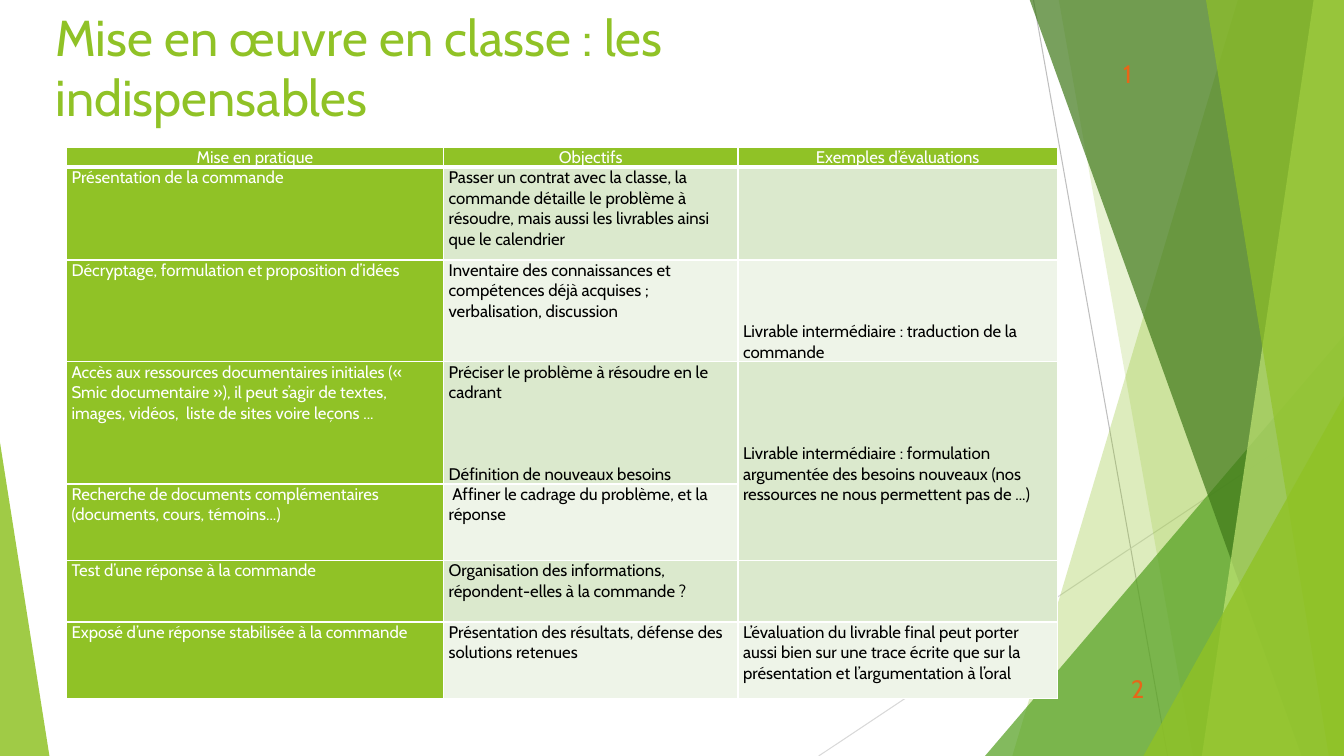
from lxml import etree
from pptx import Presentation
from pptx import util as u
from pptx.dml.color import RGBColor
from pptx.enum import shapes, text
from pptx.oxml import ns

FONT = "Cabin"
COLORS = {
    "green": "90C226", "leaf": "54A021", "forest": "3F7819", "lime": "C0E474",
    "band": "DBE9CD", "pale": "EEF4E8", "white": "FFFFFF", "black": "000000",
    "orange": "E76618", "gray": "BFBFBF", "silver": "D9D9D9",
}
WIDTH, HEIGHT = 13.33, 7.5
COLUMNS = [3.74, 2.92, 3.17]
ROWS = [0.2, 0.92, 1.0, 1.2, 0.76, 0.61, 0.76]
HEADINGS = ["Mise en pratique", "Objectifs", "Exemples d’évaluations"]
STEPS = [
    ["Présentation de la commande",
     "Passer un contrat avec la classe, la commande détaille le problème à résoudre, "
     "mais aussi les livrables ainsi que le calendrier", ""],
    ["Décryptage, formulation et proposition d’idées",
     "Inventaire des connaissances et compétences déjà acquises ; verbalisation, discussion",
     "Livrable intermédiaire : traduction de la commande"],
    ["Accès aux ressources documentaires initiales (« Smic documentaire »), il peut s’agir "
     "de textes, images, vidéos,  liste de sites voire leçons ...",
     "Préciser le problème à résoudre en le cadrant\nDéfinition de nouveaux besoins",
     "Livrable intermédiaire : formulation argumentée des besoins nouveaux "
     "(nos ressources ne nous permettent pas de ...)"],
    ["Recherche de documents complémentaires (documents, cours, témoins...)",
     " Affiner le cadrage du problème, et la réponse", ""],
    ["Test d’une réponse à la commande",
     "Organisation des informations, répondent-elles à la commande ?", ""],
    ["Exposé d’une réponse stabilisée à la commande",
     "Présentation des résultats, défense des solutions retenues",
     "L’évaluation du livrable final peut porter aussi bien sur une trace écrite "
     "que sur la présentation et l’argumentation à l’oral"],
]
TOP_GAPS = {(2, 2): 0.61, (3, 2): 0.81}


def rgb(name):
    return RGBColor.from_string(COLORS[name])


def write(frame, content, size=12, color="black", align=text.PP_ALIGN.LEFT, gap=0):
    for index, line in enumerate(content.split("\n")):
        paragraph = frame.paragraphs[0] if index == 0 else frame.add_paragraph()
        paragraph.alignment = align
        if index:
            paragraph.space_before = u.Pt(gap)
        run = paragraph.add_run()
        run.text = line
        run.font.name = FONT
        run.font.size = u.Pt(size)
        run.font.bold = False
        run.font.color.rgb = rgb(color)


def paint(facet, color, opacity):
    facet.shadow.inherit = False
    facet.fill.solid()
    facet.fill.fore_color.rgb = rgb(color)
    facet.line.fill.background()
    tone = facet.fill._xPr.find(".//" + ns.qn("a:srgbClr"))
    etree.SubElement(tone, ns.qn("a:alpha"), val=str(opacity * 1000))


def add_ray(slide, start, end, color):
    ray = slide.shapes.add_connector(
        shapes.MSO_CONNECTOR.STRAIGHT, *[u.Inches(n) for n in (*start, *end)])
    ray.line.color.rgb = rgb(color)
    ray.line.width = u.Pt(0.75)
    etree.SubElement(ray._element.spPr, ns.qn("a:effectLst"))


def add_panel(slide, top_x, bottom_x, color, opacity):
    outline = slide.shapes.build_freeform(
        u.Inches(top_x), u.Inches(-0.01))
    corners = [(WIDTH, -0.01), (WIDTH, HEIGHT), (bottom_x, HEIGHT)]
    outline.add_line_segments([(u.Inches(x), u.Inches(y)) for x, y in corners])
    paint(outline.convert_to_shape(), color, opacity)


def add_wedge(slide, left, top, width, apex, color, opacity):
    wedge = slide.shapes.add_shape(
        shapes.MSO_SHAPE.ISOSCELES_TRIANGLE, u.Inches(left), u.Inches(top),
        u.Inches(width), u.Inches(HEIGHT - top))
    wedge.adjustments[0] = apex
    paint(wedge, color, opacity)


def add_backdrop(slide):
    add_ray(slide, (10.25, 0), (11.58, HEIGHT), "gray")
    add_ray(slide, (WIDTH, 4.03), (8.12, HEIGHT), "silver")
    add_panel(slide, 12.28, 10.04, "green", 30)
    add_panel(slide, 10.5, 11.83, "green", 20)
    add_wedge(slide, 9.77, 3.33, 3.56, 1, "leaf", 72)
    add_panel(slide, 10.21, 12.91, "forest", 70)
    add_panel(slide, 13.03, 11.92, "lime", 70)
    add_panel(slide, 11.96, 13.18, "green", 65)
    add_wedge(slide, 11.34, 3.93, 1.99, 1, "green", 80)
    add_wedge(slide, 0, 4.39, 0.49, 0, "green", 85)


def add_title(slide, content):
    title = slide.shapes.title
    title.left, title.top = u.Inches(0.45), u.Inches(0.01)
    title.width, title.height = u.Inches(9.4), u.Inches(1.44)
    frame = title.text_frame
    frame.word_wrap = True
    frame.auto_size = text.MSO_AUTO_SIZE.NONE
    frame.vertical_anchor = text.MSO_ANCHOR.TOP
    frame.margin_right = u.Inches(0.2)
    write(frame, content, size=36, color="green")


def add_number(slide, content, left, top):
    number = slide.shapes.add_textbox(
        u.Inches(left), u.Inches(top), u.Inches(0.34), u.Inches(0.4))
    number.text_frame.word_wrap = False
    number.text_frame.auto_size = text.MSO_AUTO_SIZE.SHAPE_TO_FIT_TEXT
    write(number.text_frame, content, size=18, color="orange")


def add_borders(cell, bottom):
    properties = cell._tc.get_or_add_tcPr()
    for index, (side, points) in enumerate(
            [("lnL", 1), ("lnR", 1), ("lnT", 1), ("lnB", bottom)]):
        border = etree.Element(ns.qn("a:" + side), w=str(u.Pt(points)))
        fill = etree.SubElement(border, ns.qn("a:solidFill"))
        etree.SubElement(fill, ns.qn("a:srgbClr"), val=COLORS["white"])
        properties.insert(index, border)


def fill_cell(cell, content, row, column):
    heading = row == 0
    strong = heading or column == 0
    cell.fill.solid()
    cell.fill.fore_color.rgb = rgb("green" if strong else "band" if row % 2 else "pale")
    add_borders(cell, 3 if heading else 1)
    if content:
        cell.margin_left = cell.margin_right = u.Inches(0.05)
        cell.margin_top = u.Inches(TOP_GAPS.get((row, column), 0))
        cell.margin_bottom = 0
        write(cell.text_frame, content, color="white" if strong else "black", gap=44,
              align=text.PP_ALIGN.CENTER if heading else text.PP_ALIGN.LEFT)


def add_steps(slide):
    table = slide.shapes.add_table(
        len(ROWS), len(COLUMNS), u.Inches(0.66), u.Inches(1.46),
        u.Inches(sum(COLUMNS)), u.Inches(sum(ROWS))).table
    table.horz_banding = False
    for column, width in zip(table.columns, COLUMNS):
        column.width = u.Inches(width)
    for row, height in zip(table.rows, ROWS):
        row.height = u.Inches(height)
    table.cell(3, 2).merge(table.cell(4, 2))
    for row, contents in enumerate([HEADINGS] + STEPS):
        for column, content in enumerate(contents):
            fill_cell(table.cell(row, column), content, row, column)


def main():
    deck = Presentation()
    deck.slide_width, deck.slide_height = u.Inches(WIDTH), u.Inches(HEIGHT)
    slide = deck.slides.add_slide(deck.slide_layouts[5])
    add_backdrop(slide)
    add_title(slide, "Mise en œuvre en classe : les indispensables")
    add_number(slide, "1", 11.04, 0.53)
    add_number(slide, "2", 11.12, 6.63)
    add_steps(slide)
    deck.save("out.pptx")


if __name__ == "__main__":
    main()
